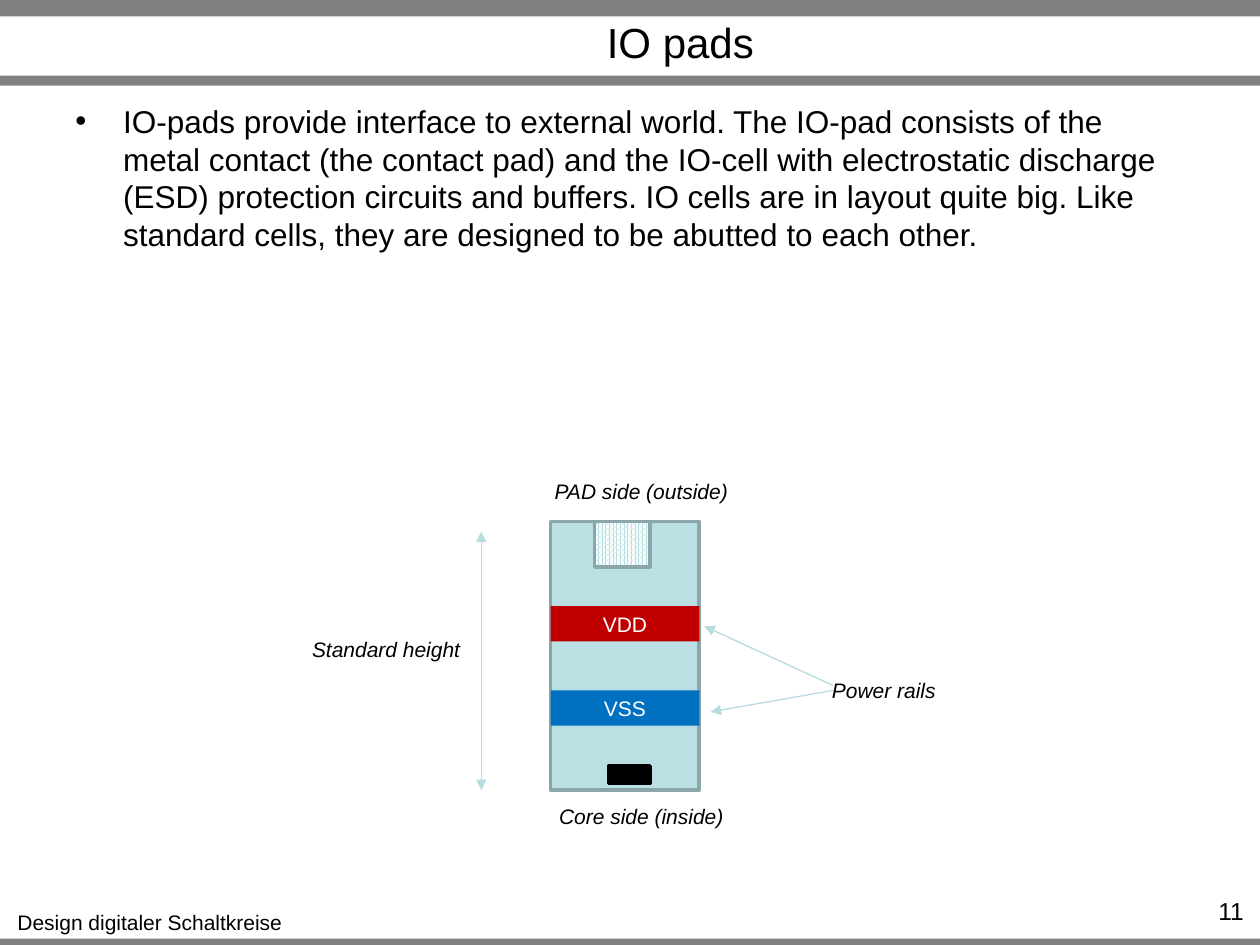
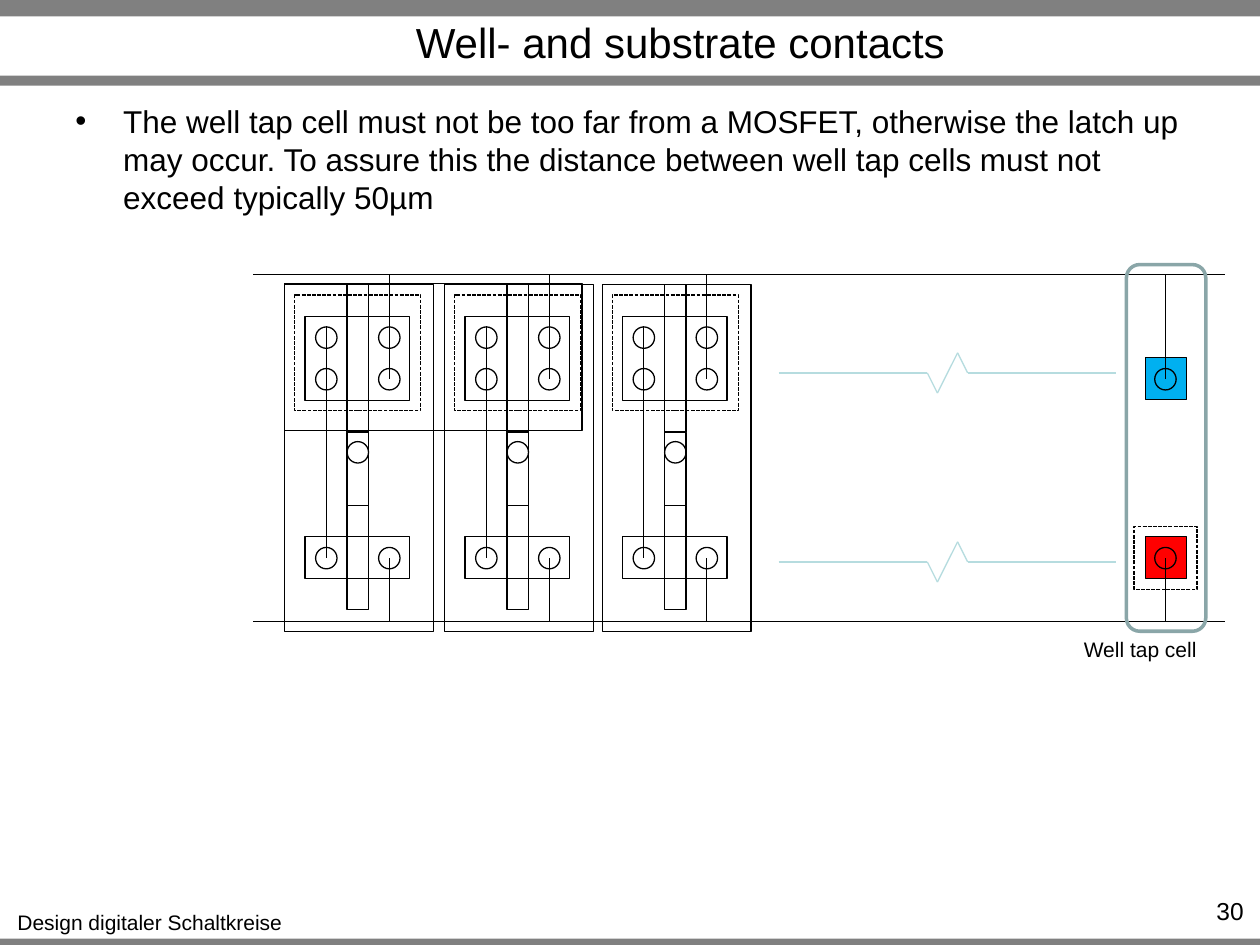
import pptx
import pptx.util
import pptx.dml.color
import pptx.enum.dml
import pptx.enum.shapes
import pptx.enum.text
import pptx.oxml.ns
from lxml import etree

Inches = pptx.util.Inches
Pt = pptx.util.Pt
KIND = pptx.enum.shapes.MSO_SHAPE
ALIGN = pptx.enum.text.PP_ALIGN
ANCHOR = pptx.enum.text.MSO_ANCHOR
qn = pptx.oxml.ns.qn

FONT = "Arial"
BLACK, WHITE, GRAY = "000000", "FFFFFF", "808080"
TEAL, EDGE, PALE = "BBE0E3", "8AA6A8", "B6DCDF"
RED, BLUE = "C00000", "0070C0"
NWELL, PWELL = "00B0F0", "FF0000"
FOOTER = "Design digitaler Schaltkreise"

TOP, BASE = 2.18, 4.93  # supply rails of the cell row
DOT = 0.17              # contact diameter
GATE = 0.17             # gate width


def color(code):
    return pptx.dml.color.RGBColor.from_string(code)


def write(shape, text, size, ink=BLACK, align=ALIGN.CENTER, italic=False):
    par = shape.text_frame.paragraphs[0]
    par.alignment = align
    run = par.add_run()
    run.text = text
    run.font.name = FONT
    run.font.size = Pt(size)
    run.font.italic = italic
    run.font.color.rgb = color(ink)
    return par


def label(shapes, at, text, size=12, align=ALIGN.CENTER, italic=False,
          wrap=True, anchor=ANCHOR.TOP):
    box = shapes.add_textbox(*map(Inches, at))
    box.text_frame.word_wrap = wrap
    box.text_frame.vertical_anchor = anchor
    return write(box, text, size, align=align, italic=italic)


def block(shapes, at, fill=None, line=None, width=0.75, kind=KIND.RECTANGLE,
          dash=False):
    """Add a preset shape; without fill or line colour it has none."""
    shape = shapes.add_shape(kind, *map(Inches, at))
    shape.shadow.inherit = False
    if fill:
        shape.fill.solid()
        shape.fill.fore_color.rgb = color(fill)
    else:
        shape.fill.background()
    if line:
        shape.line.color.rgb = color(line)
        shape.line.width = Pt(width)
        if dash:
            shape.line.dash_style = pptx.enum.dml.MSO_LINE.SQUARE_DOT
    else:
        shape.line.fill.background()
    return shape


def wire(shapes, start, end, ink=BLACK, heads=()):
    """Add a straight line; heads names the ends that get a triangle."""
    line = shapes.add_connector(pptx.enum.shapes.MSO_CONNECTOR.STRAIGHT,
                                *map(Inches, (*start, *end)))
    line.line.color.rgb = color(ink)
    line.line.width = Pt(0.75)
    props = line.element.spPr
    for name in heads:
        etree.SubElement(props.find(qn("a:ln")), qn("a:" + name),
                         type="triangle")
    etree.SubElement(props, qn("a:effectLst"))


def dot(shapes, x, y):
    """Add a contact circle around its centre."""
    block(shapes, (x - DOT / 2, y - DOT / 2, DOT, DOT), line=BLACK,
          kind=KIND.OVAL)


def bullet(shapes, text, height):
    par = label(shapes, (0.5, 0.76, 9, height), text, 18, ALIGN.LEFT)
    props = par._p.get_or_add_pPr()
    props.set("marL", str(Inches(0.38)))
    props.set("indent", str(-Inches(0.38)))
    etree.SubElement(props, qn("a:buFont"), typeface=FONT)
    etree.SubElement(props, qn("a:buChar"), char="•")


def page(deck, title, number):
    """Add a slide with bands, footer, title and number."""
    shapes = deck.slides.add_slide(deck.slide_layouts[6]).shapes
    for top, height in ((7.45, 0.08), (0, 0.13), (0.6, 0.08)):
        block(shapes, (0, top, 10, height), GRAY)
    label(shapes, (0.03, 7.17, 2.32, 0.3), FOOTER, wrap=False)
    label(shapes, (1.3, 0.14, 8.2, 0.38), title, 24, anchor=ANCHOR.MIDDLE)
    label(shapes, (9.1, 7.06, 0.87, 0.24), number, 14, ALIGN.RIGHT)
    return shapes


def pad(shapes):
    """Draw the IO cell with contact pad, rails and core pin."""
    left, width = 4.37, 1.18
    block(shapes, (left, 4.14, width, 2.13), TEAL, EDGE, 2)
    metal = block(shapes, (4.72, 4.14, 0.44, 0.36), line=EDGE, width=2)
    metal.fill.patterned()
    metal.fill.pattern = pptx.enum.dml.MSO_PATTERN.PERCENT_80
    metal.fill.fore_color.rgb = color(TEAL)
    metal.fill.back_color.rgb = color(WHITE)
    block(shapes, (4.83, 6.08, 0.33, 0.14), BLACK, BLACK, 2)
    for name, top, fill in (("VDD", 4.81, RED), ("VSS", 5.48, BLUE)):
        rail = block(shapes, (left, top, width, 0.28), fill)
        rail.text_frame.vertical_anchor = ANCHOR.MIDDLE
        write(rail, name, 12, WHITE)


def gate(shapes, left):
    """Draw one inverter cell, grouped, from its left edge."""
    parts = shapes.add_group_shape().shapes
    west, mid, east = left + 0.33, left + 0.58, left + 0.83
    block(parts, (left, 2.26, 1.18, 2.75), line=BLACK)
    block(parts, (left + 0.08, 2.34, 1, 0.92), line=BLACK, dash=True)
    for top, height in ((2.51, 0.67), (4.26, 0.33)):
        block(parts, (left + 0.16, top, 0.83, height), line=BLACK)
    for top, height in ((2.26, 1.17), (3.43, 0.58), (4.01, 0.83)):
        block(parts, (mid - GATE / 2, top, GATE, height), line=BLACK)
    for y in (2.68, 3.01, 4.43):
        dot(parts, west, y)
        dot(parts, east, y)
    dot(parts, mid, 3.59)
    wire(parts, (left - 0.25, TOP), (left + 1.41, TOP))
    wire(parts, (east, TOP), (east, 3.01))
    wire(parts, (east, 4.43), (east, BASE))
    wire(parts, (west, 2.59), (west, 4.43))


def tap(shapes):
    """Draw the well tap cell with its two contacts."""
    mid = 9.25
    block(shapes, (9, 4.18, 0.5, 0.5), line=BLACK, dash=True)
    for y, fill, rail in ((3.01, NWELL, TOP), (4.43, PWELL, BASE)):
        block(shapes, (9.09, y - 0.17, 0.33, 0.33), fill, BLACK)
        dot(shapes, mid, y)
        wire(shapes, (mid, y), (mid, rail))
    block(shapes, (8.94, 2.1, 0.63, 2.91), line=EDGE, width=2,
          kind=KIND.ROUNDED_RECTANGLE)
    label(shapes, (8.5, 5, 1.1, 0.3), "Well tap cell", wrap=False)


def gap(shapes, y):
    """Draw a broken line for the cells left out."""
    steps = ((6.18, 0), (7.36, 0), (7.44, 0.16), (7.52, 0),
             (7.6, -0.16), (7.68, 0), (8.86, 0))
    points = [(x, y + rise) for x, rise in steps]
    for start, end in zip(points, points[1:]):
        wire(shapes, start, end, PALE)


def pads(deck):
    shapes = page(deck, "IO pads", "11")
    bullet(shapes, "IO-pads provide interface to external world. The IO-pad "
           "consists of the metal contact (the contact pad) and the IO-cell "
           "with electrostatic discharge (ESD) protection circuits and "
           "buffers. IO cells are in layout quite big. Like standard cells, "
           "they are designed to be abutted to each other.", 1.74)
    pad(shapes)
    wire(shapes, (3.82, 6.27), (3.82, 4.22), PALE, ("headEnd", "tailEnd"))
    wire(shapes, (6.61, 5.44), (5.59, 4.97), PALE, ("tailEnd",))
    wire(shapes, (6.61, 5.48), (5.64, 5.65), PALE, ("tailEnd",))
    for text, left, top, width in (("PAD side (outside)", 3.75, 3.75, 2.68),
                                   ("Core side (inside)", 3.75, 6.33, 2.68),
                                   ("Standard height", 2, 5, 2.13),
                                   ("Power rails", 6.5, 5.33, 1.03)):
        label(shapes, (left, top, width, 0.4), text, italic=True,
              wrap=text != "Power rails")


def wells(deck):
    shapes = page(deck, "Well- and substrate contacts", "30")
    bullet(shapes, "The well tap cell must not be too far from a MOSFET, "
           "otherwise the latch up may occur. To assure this the distance "
           "between well tap cells must not exceed typically 50µm", 0.99)
    for left in (2.26, 3.53, 4.78):
        gate(shapes, left)
    block(shapes, (2.26, 2.25, 2.36, 1.17), line=BLACK)
    for y in (TOP, BASE):
        wire(shapes, (9.72, y), (2.01, y))
    tap(shapes)
    for y in (2.96, 4.46):
        gap(shapes, y)


def main():
    deck = pptx.Presentation()
    deck.slide_width, deck.slide_height = Inches(10), Inches(7.5)
    pads(deck)
    wells(deck)
    deck.save("out.pptx")


if __name__ == "__main__":
    main()
